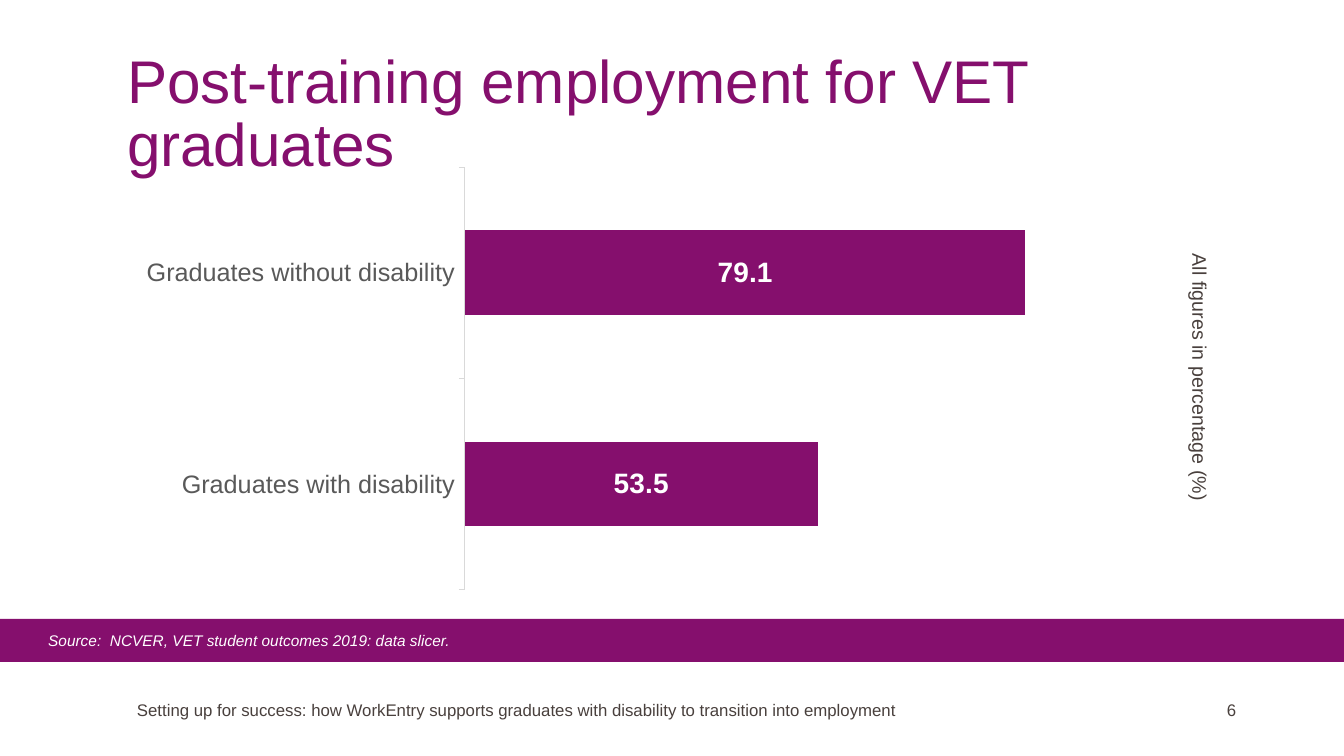
from lxml import etree
from pptx import Presentation
from pptx.chart.data import CategoryChartData
from pptx.dml.color import RGBColor
from pptx.enum.chart import XL_CHART_TYPE, XL_LABEL_POSITION, XL_TICK_MARK
from pptx.enum.shapes import MSO_CONNECTOR, MSO_SHAPE
from pptx.enum.text import MSO_ANCHOR, MSO_AUTO_SIZE
from pptx.oxml import parse_xml
from pptx.oxml.ns import nsdecls, qn
from pptx.util import Inches, Pt

BAR_STACKED = XL_CHART_TYPE.BAR_STACKED
LABEL_CENTER = XL_LABEL_POSITION.CENTER
TICK_OUTSIDE = XL_TICK_MARK.OUTSIDE
STRAIGHT = MSO_CONNECTOR.STRAIGHT
RECTANGLE = MSO_SHAPE.RECTANGLE
TOP, MIDDLE = MSO_ANCHOR.TOP, MSO_ANCHOR.MIDDLE
FIT_SHAPE = MSO_AUTO_SIZE.SHAPE_TO_FIT_TEXT

PURPLE = RGBColor(0x85, 0x0F, 0x6D)
WHITE = RGBColor(0xFF, 0xFF, 0xFF)
BROWN_GREY = RGBColor(0x49, 0x40, 0x3D)
LABEL_GREY = RGBColor(0x59, 0x59, 0x59)
AXIS_GREY = RGBColor(0xD9, 0xD9, 0xD9)
FONT = "Arial"
SLIDE_WIDTH, SLIDE_HEIGHT = 13.33, 7.5
MARGIN, CONTENT_WIDTH = 1.26, 10.81


def style_font(font, size, color, bold=False, italic=False):
    font.name = FONT
    font.size = Pt(size)
    font.color.rgb = color
    font.bold = bold
    font.italic = italic


def add_text(slide, box, text, size, color, anchor=TOP, italic=False, wrap=True):
    """Place one paragraph of text in box (left, top, width, height in inches)."""
    shape = slide.shapes.add_textbox(*map(Inches, box))
    frame = shape.text_frame
    frame.word_wrap = wrap
    frame.vertical_anchor = anchor
    frame.text = text
    style_font(frame.paragraphs[0].runs[0].font, size, color, italic=italic)
    return shape


def add_title(slide, box):
    title = add_text(slide, box, "Post-training employment for VET graduates", 43, PURPLE)
    frame = title.text_frame
    frame.margin_left = frame.margin_top = frame.margin_right = frame.margin_bottom = 0
    frame.paragraphs[0].line_spacing = Pt(45)


def set_plot_layout(chart, left, top, width, height):
    """Fix the inner plot area, as fractions of the chart."""
    plot_area = chart._chartSpace.chart.plotArea
    for layout in plot_area.findall(qn("c:layout")):
        plot_area.remove(layout)
    layout = parse_xml(
        f'<c:layout {nsdecls("c")}><c:manualLayout><c:layoutTarget val="inner"/>'
        '<c:xMode val="edge"/><c:yMode val="edge"/>'
        f'<c:x val="{left}"/><c:y val="{top}"/><c:w val="{width}"/><c:h val="{height}"/>'
        '</c:manualLayout></c:layout>')
    plot_area.insert(0, layout)


def add_employment_chart(slide, box):
    data = CategoryChartData(number_format="0.0")
    data.categories = ["Graduates with disability", "Graduates without disability"]
    data.add_series("Series 1", [53.5, 79.1])
    chart = slide.shapes.add_chart(BAR_STACKED, *map(Inches, box), data).chart
    chart.has_legend = False
    chart.has_title = False
    style_font(chart.font, 18, LABEL_GREY)
    set_plot_layout(chart, 0.31, 0.02, 0.67, 0.96)

    category_axis = chart.category_axis
    category_axis.major_tick_mark = TICK_OUTSIDE
    category_axis.format.line.color.rgb = AXIS_GREY
    category_axis.format.line.width = Pt(0.75)
    style_font(category_axis.tick_labels.font, 18, LABEL_GREY)

    value_axis = chart.value_axis
    value_axis.minimum_scale, value_axis.maximum_scale = 10, 100
    value_axis.has_major_gridlines = False
    value_axis.visible = False

    plot = chart.plots[0]
    plot.vary_by_categories = False
    plot.gap_width = 150
    plot.overlap = 100
    series = plot.series[0]
    series.format.fill.solid()
    series.format.fill.fore_color.rgb = PURPLE
    labels = series.data_labels
    labels.show_value = True
    labels.position = LABEL_CENTER
    style_font(labels.font, 20, WHITE, bold=True)


def add_unit_note(slide, box):
    note = add_text(slide, box, "All figures in percentage (%)", 14, BROWN_GREY, wrap=False)
    note.text_frame.auto_size = FIT_SHAPE
    note.rotation = 90


def add_source_band(slide, box):
    left, top, width, height = box
    line_top = top + 0.36
    line = slide.shapes.add_connector(
        STRAIGHT, Inches(left), Inches(line_top), Inches(left + width), Inches(line_top))
    line.line.color.rgb = PURPLE
    line.line.width = Pt(10)
    etree.SubElement(line._element.spPr, qn("a:effectLst"))

    band = slide.shapes.add_shape(RECTANGLE, *map(Inches, box))
    band.shadow.inherit = False
    band.fill.solid()
    band.fill.fore_color.rgb = PURPLE
    band.line.fill.background()

    source = add_text(
        slide, (left + 0.38, top + 0.07, width - 0.76, 0.29),
        "Source:  NCVER, VET student outcomes 2019: data slicer.", 11, WHITE, italic=True)
    source.text_frame.auto_size = FIT_SHAPE


def add_footer(slide, box):
    left, top, width, height = box
    add_text(slide, (left, top, 8.49, height),
             "Setting up for success: how WorkEntry supports graduates with disability "
             "to transition into employment", 12, BROWN_GREY, MIDDLE)
    add_text(slide, (left + width, top, 0.85, height), "6", 12, BROWN_GREY, MIDDLE)


def main():
    presentation = Presentation()
    presentation.slide_width = Inches(SLIDE_WIDTH)
    presentation.slide_height = Inches(SLIDE_HEIGHT)
    slide = presentation.slides.add_slide(presentation.slide_layouts[6])
    add_source_band(slide, (0, 6.14, SLIDE_WIDTH, 0.42))
    add_title(slide, (MARGIN, 0.52, CONTENT_WIDTH, 0.8))
    add_employment_chart(slide, (MARGIN, 1.57, CONTENT_WIDTH, 4.37))
    add_footer(slide, (MARGIN, 6.58, CONTENT_WIDTH, 0.92))
    add_unit_note(slide, (10.57, 3.58, 2.66, 0.34))
    presentation.save("out.pptx")


if __name__ == "__main__":
    main()
